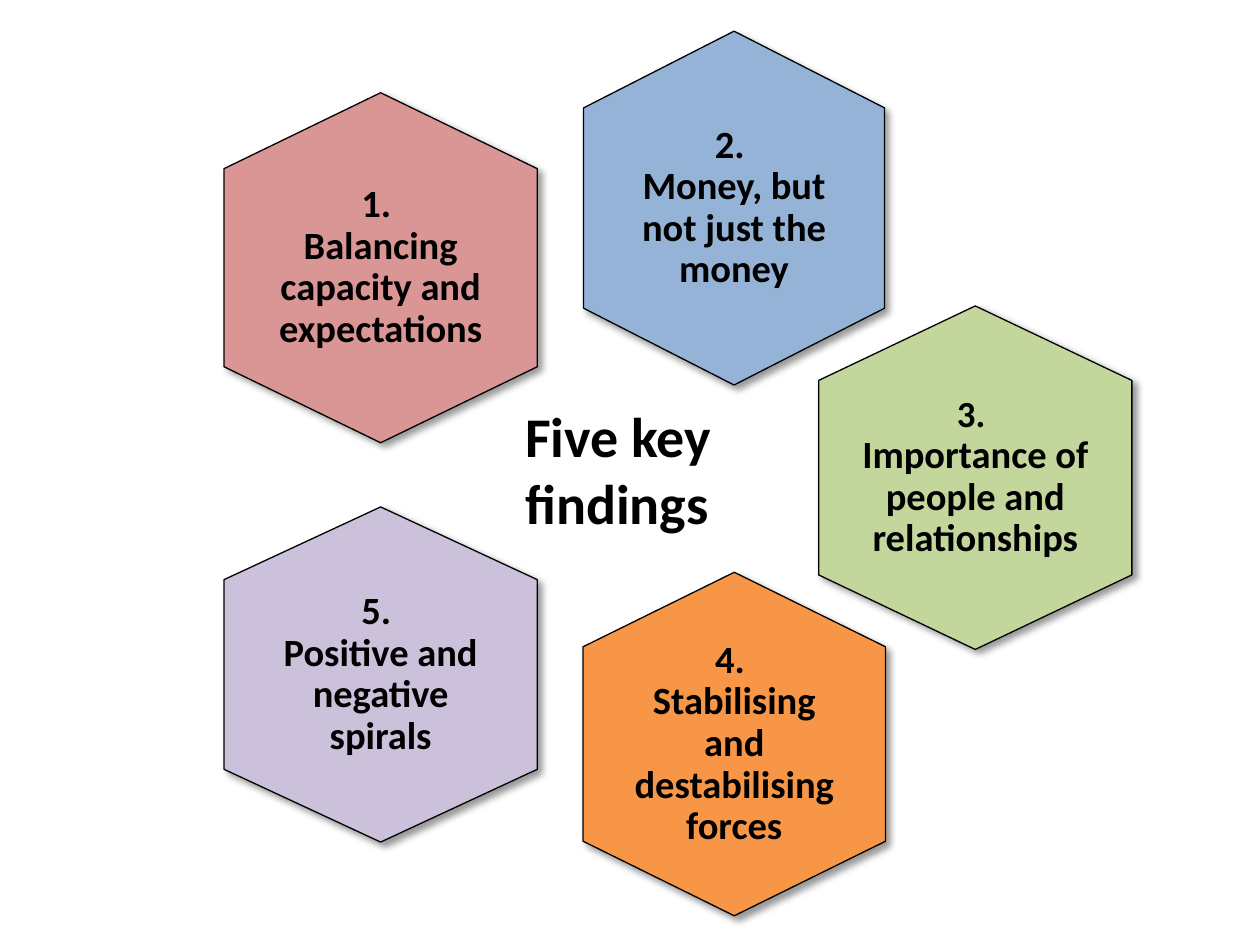
from lxml import etree
from pptx import Presentation
from pptx.dml.color import RGBColor
from pptx.enum import text as t
from pptx.oxml import ns, parse_xml
from pptx.util import Pt

SHADOW = (
    f'<a:effectLst {ns.nsdecls("a")}>'
    '<a:outerShdw blurRad="50800" dist="38100" dir="2700000" algn="tl" rotWithShape="0">'
    '<a:srgbClr val="000000"><a:alpha val="40000"/></a:srgbClr>'
    '</a:outerShdw></a:effectLst>'
)


def color(hex_code):
    return RGBColor.from_string(hex_code)


def write(paragraph, words, size=22, align=None, line_spacing=None):
    paragraph.alignment = align
    paragraph.line_spacing = line_spacing
    run = paragraph.add_run()
    run.text = words
    run.font.name = "Calibri"
    run.font.size = Pt(size)
    run.font.bold = True
    run.font.color.rgb = color("000000")


deck = Presentation()
deck.slide_width, deck.slide_height = Pt(720), Pt(540)
slide = deck.slides.add_slide(deck.slide_layouts[6])

# Findings: number, wording, fill, left, top, width, height, side inset, number size
findings = [
    (1, "Balancing capacity and expectations", "D99694", 128, 53, 179, 200, 24.5, 22),
    (5, "Positive and negative spirals", "CCC1DA", 128, 289.7, 179, 191.5, 24.5, 22),
    (3, "Importance of people and relationships", "C3D69B", 467.8, 174.8, 179, 196.3, 21, 21),
    (2, "Money, but not just the money", "95B3D7", 333.5, 17.8, 172, 202.2, 24.5, 22),
    (4, "Stabilising and destabilising forces", "F79646", 333.2, 327, 172.8, 196.3, 21, 22),
]

for number, wording, fill, left, top, width, height, inset, number_size in findings:
    # Hexagon standing on its point
    middle, right, bottom = left + width / 2, left + width, top + height
    upper, lower = top + 0.217 * height, bottom - 0.217 * height
    corners = [(right, upper), (right, lower), (middle, bottom), (left, lower), (left, upper)]
    outline = slide.shapes.build_freeform(Pt(middle), Pt(top))
    outline.add_line_segments([(Pt(x), Pt(y)) for x, y in corners], close=True)
    hexagon = outline.convert_to_shape()
    hexagon.fill.solid()
    hexagon.fill.fore_color.rgb = color(fill)
    hexagon.line.color.rgb = color("000000")
    hexagon.line.width = Pt(0.75)
    hexagon._element.spPr.append(parse_xml(SHADOW))

    # Number above its finding
    frame = hexagon.text_frame
    frame.word_wrap = True
    frame.vertical_anchor = t.MSO_ANCHOR.MIDDLE
    frame.margin_left = frame.margin_right = Pt(inset)
    frame.margin_top = frame.margin_bottom = Pt(inset + 3)
    centred = dict(align=t.PP_ALIGN.CENTER, line_spacing=0.9)
    write(frame.paragraphs[0], f"{number}. ", size=number_size, **centred)
    finding = frame.add_paragraph()
    write(finding, wording, **centred)
    space_after = etree.SubElement(finding._p.pPr, ns.qn("a:spcAft"))
    etree.SubElement(space_after, ns.qn("a:spcPct"), val="35000")

# Title in the middle of the ring
title = slide.shapes.add_textbox(Pt(293), Pt(226), Pt(151), Pt(85)).text_frame
title.word_wrap = True
title.auto_size = t.MSO_AUTO_SIZE.SHAPE_TO_FIT_TEXT
write(title.paragraphs[0], "Five key findings", size=32)

deck.save("out.pptx")
